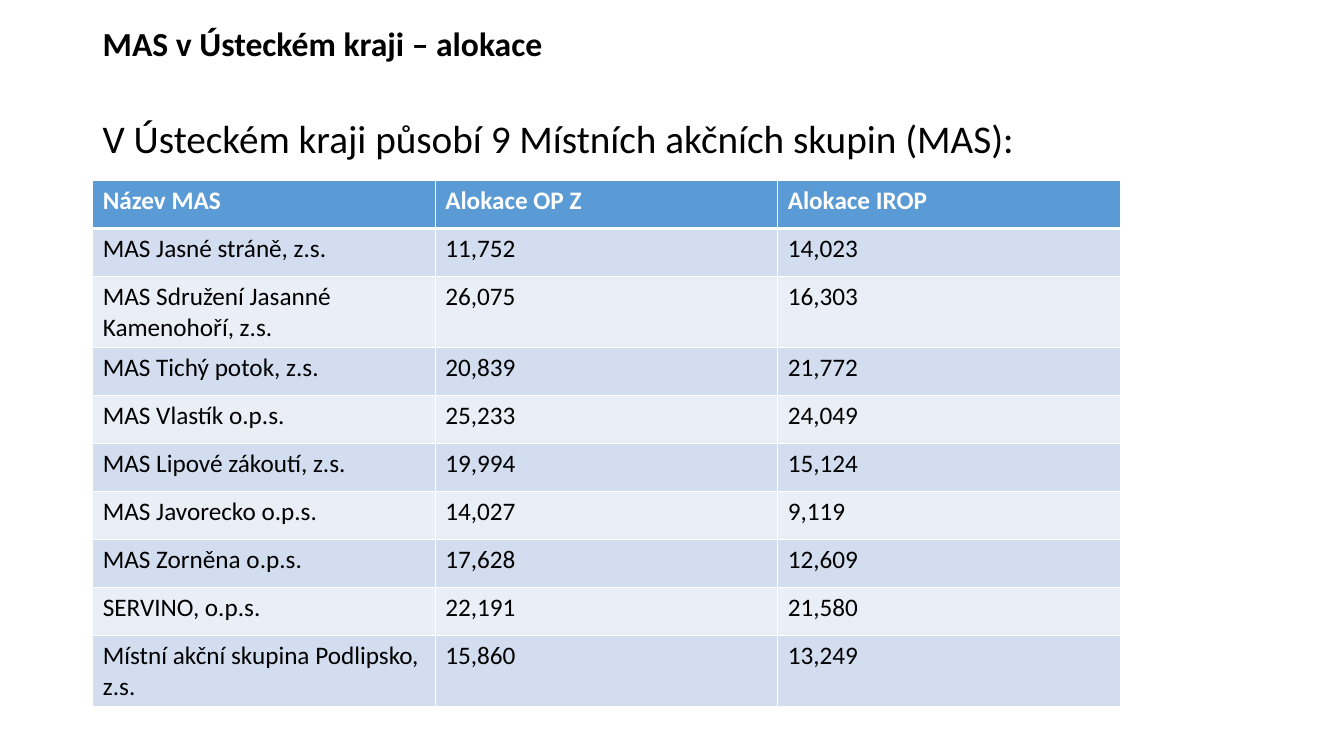
from pptx import Presentation
from pptx import util as u
from pptx.dml.color import RGBColor
from pptx.enum import text
from pptx.oxml import parse_xml
from pptx.oxml.ns import nsdecls

WHITE = RGBColor(0xFF, 0xFF, 0xFF)
BLACK = RGBColor(0, 0, 0)
BLUE = RGBColor(0x5B, 0x9B, 0xD5)
BANDS = (RGBColor(0xEA, 0xEF, 0xF7), RGBColor(0xD2, 0xDE, 0xEF))

WIDE, HIGH = u.Inches(13.33), u.Inches(7.5)
LEFT = u.Inches(0.92)
COL = u.Inches(10.19 / 3)
ROW = u.Inches(4.77 / 10)

ROWS = [
    ("Název MAS", "Alokace OP Z", "Alokace IROP"),
    ("MAS Jasné stráně, z.s.", "11,752", "14,023"),
    ("MAS Sdružení Jasanné Kamenohoří, z.s.", "26,075", "16,303"),
    ("MAS Tichý potok, z.s.", "20,839", "21,772"),
    ("MAS Vlastík o.p.s.", "25,233", "24,049"),
    ("MAS Lipové zákoutí, z.s.", "19,994", "15,124"),
    ("MAS Javorecko o.p.s.", "14,027", "9,119"),
    ("MAS Zorněna o.p.s.", "17,628", "12,609"),
    ("SERVINO, o.p.s.", "22,191", "21,580"),
    ("Místní akční skupina Podlipsko, z.s.", "15,860", "13,249"),
]


def add_run(para, words, size, color=BLACK, bold=False):
    run = para.add_run()
    run.text = words
    font = run.font
    font.name, font.size, font.bold = "Calibri", u.Pt(size), bold
    font.color.rgb = color


def add_text(slide, top, height, words, size, anchor, bold=False):
    box = slide.shapes.add_textbox(LEFT, u.Inches(top), u.Inches(11.5), u.Inches(height))
    frame = box.text_frame
    frame.word_wrap = True
    frame.vertical_anchor = anchor
    para = frame.paragraphs[0]
    para.line_spacing = 0.9
    add_run(para, words, size, bold=bold)


def add_edges(cell, top, bottom):
    """Draw white cell borders; top and bottom are widths in points."""
    props = cell._tc.get_or_add_tcPr()
    sides = (("lnL", 1), ("lnR", 1), ("lnT", top), ("lnB", bottom))
    for spot, (side, width) in enumerate(sides):
        props.insert(spot, parse_xml(
            f'<a:{side} {nsdecls("a")} w="{u.Pt(width)}"><a:solidFill>'
            f'<a:srgbClr val="{WHITE}"/></a:solidFill></a:{side}>'))


def add_grid(slide, top):
    count = len(ROWS[0])
    frame = slide.shapes.add_table(
        len(ROWS), count, LEFT, u.Inches(top), COL * count, ROW * len(ROWS))
    table = frame.table
    for col in table.columns:
        col.width = COL
    for r, row in enumerate(ROWS):
        head = r == 0
        table.rows[r].height = ROW
        for c, words in enumerate(row):
            cell = table.cell(r, c)
            cell.fill.solid()
            cell.fill.fore_color.rgb = BLUE if head else BANDS[r % 2]
            add_edges(cell, 3 if r == 1 else 1, 3 if head else 1)
            add_run(cell.text_frame.paragraphs[0], words, 18,
                    WHITE if head else BLACK, head)


def main():
    deck = Presentation()
    deck.slide_width, deck.slide_height = WIDE, HIGH
    slide = deck.slides.add_slide(deck.slide_layouts[6])
    add_text(slide, 0, 0.9, "MAS v Ústeckém kraji – alokace", 24,
             text.MSO_ANCHOR.MIDDLE, bold=True)
    add_text(slide, 1.14, 5.86, "V Ústeckém kraji působí 9 Místních akčních skupin (MAS):",
             28, text.MSO_ANCHOR.TOP)
    add_grid(slide, 1.79)
    deck.save("out.pptx")


if __name__ == "__main__":
    main()
